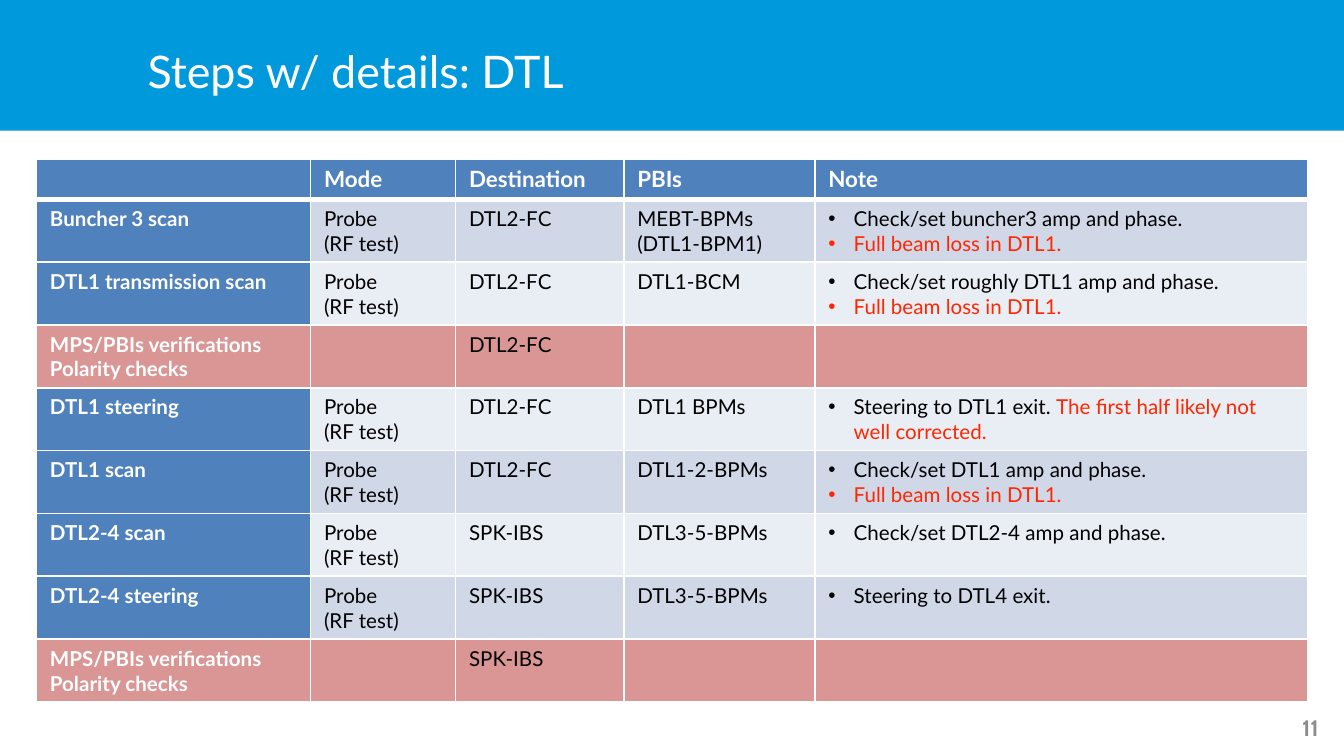
from dataclasses import dataclass

import lxml.etree
import pptx
import pptx.dml.color
import pptx.enum.shapes
import pptx.enum.text
import pptx.oxml.ns
import pptx.util
from pptx.util import Cm, Pt

COLORS = {
    "banner": "0099DC",
    "header": "4F81BD",
    "odd_row": "D0D8E8",
    "even_row": "E9EDF4",
    "check_row": "D99694",
    "text": "000000",
    "warning": "FF2600",
    "light": "FFFFFF",
    "page_number": "8C8C8C",
}
BODY_FONT = "Lato"
COLUMN_WIDTHS = (5.18, 2.74, 3.18, 3.61, 9.32)
HEADINGS = ("", "Mode", "Destination", "PBIs", "Note")
HEADER_HEIGHT, STEP_HEIGHT = 0.76, 1.18
BULLET_INDENT = Cm(0.48)


@dataclass
class Note:
    """One bullet: plain words, then words in the warning colour."""
    plain: str = ""
    warning: str = ""


@dataclass
class Step:
    name: str
    destination: str
    monitors: str = ""
    notes: tuple[Note, ...] = ()
    mode: str = "Probe\n(RF test)"
    is_check: bool = False


def verification(destination: str) -> Step:
    return Step("MPS/PBIs verifications Polarity checks", destination, mode="", is_check=True)


FULL_LOSS = Note(warning="Full beam loss in DTL1.")
STEPS = (
    Step("Buncher 3 scan", "DTL2-FC", "MEBT-BPMs\n(DTL1-BPM1)",
         (Note("Check/set buncher3 amp and phase."), FULL_LOSS)),
    Step("DTL1 transmission scan", "DTL2-FC", "DTL1-BCM",
         (Note("Check/set roughly DTL1 amp and phase."), FULL_LOSS)),
    verification("DTL2-FC"),
    Step("DTL1 steering", "DTL2-FC", "DTL1 BPMs",
         (Note("Steering to DTL1 exit. ", "The first half likely not well corrected."),)),
    Step("DTL1 scan", "DTL2-FC", "DTL1-2-BPMs",
         (Note("Check/set DTL1 amp and phase."), FULL_LOSS)),
    Step("DTL2-4 scan", "SPK-IBS", "DTL3-5-BPMs",
         (Note("Check/set DTL2-4 amp and phase."),)),
    Step("DTL2-4 steering", "SPK-IBS", "DTL3-5-BPMs", (Note("Steering to DTL4 exit."),)),
    verification("SPK-IBS"),
)


def rgb(color: str) -> pptx.dml.color.RGBColor:
    return pptx.dml.color.RGBColor.from_string(COLORS[color])


def add_element(parent, tag: str, **attributes: str):
    return lxml.etree.SubElement(parent, pptx.oxml.ns.qn(tag), attributes)


def format_run(run, size: float, color: str, bold: bool = False, font: str = BODY_FONT) -> None:
    run.font.name = font
    run.font.size = Pt(size)
    run.font.bold = bold
    run.font.color.rgb = rgb(color)


def add_label(slide, text: str, box: tuple, size: float, color: str, **style):
    label = slide.shapes.add_textbox(*(Cm(length) for length in box))
    frame = label.text_frame
    frame.word_wrap = True
    frame.vertical_anchor = pptx.enum.text.MSO_ANCHOR.MIDDLE
    frame.text = text
    format_run(frame.paragraphs[0].runs[0], size, color, **style)
    return label


def style_cell(cell, fill: str, bottom_width: float = 1) -> None:
    """Give the cell white borders and a solid fill."""
    properties = cell._tc.get_or_add_tcPr()
    for side in ("L", "R", "T", "B"):
        width = bottom_width if side == "B" else 1
        border = add_element(properties, f"a:ln{side}", w=str(Pt(width)))
        add_element(add_element(border, "a:solidFill"), "a:srgbClr", val=COLORS["light"])
    cell.fill.solid()
    cell.fill.fore_color.rgb = rgb(fill)


def write_cell(cell, text: str, size: float, color: str, bold: bool = False) -> None:
    cell.text_frame.text = text
    for paragraph in cell.text_frame.paragraphs:
        for run in paragraph.runs:
            format_run(run, size, color, bold)
        if not paragraph.runs:  # keeps an empty cell from stretching its row
            add_element(paragraph._p, "a:endParaRPr", sz=str(size * 100))


def write_notes(cell, notes: tuple[Note, ...]) -> None:
    frame = cell.text_frame
    for index, note in enumerate(notes):
        paragraph = frame.add_paragraph() if index else frame.paragraphs[0]
        properties = paragraph._p.get_or_add_pPr()
        properties.set("marL", str(BULLET_INDENT))
        properties.set("indent", str(-BULLET_INDENT))
        add_element(properties, "a:buFont", typeface="Arial")
        add_element(properties, "a:buChar", char="•")
        for text, color in ((note.plain, "text"), (note.warning, "warning")):
            if text:
                run = paragraph.add_run()
                run.text = text
                format_run(run, 11, color)


def add_steps_table(slide) -> None:
    height = HEADER_HEIGHT + STEP_HEIGHT * len(STEPS)
    table = slide.shapes.add_table(
        len(STEPS) + 1, len(HEADINGS), Cm(0.69), Cm(3), Cm(sum(COLUMN_WIDTHS)), Cm(height)
    ).table
    table.horz_banding = False
    for column, width in zip(table.columns, COLUMN_WIDTHS):
        column.width = Cm(width)
    for row in table.rows:
        row.height = Cm(STEP_HEIGHT)
    table.rows[0].height = Cm(HEADER_HEIGHT)

    for column, heading in enumerate(HEADINGS):
        style_cell(table.cell(0, column), "header", bottom_width=3)
        write_cell(table.cell(0, column), heading, 12, "light", bold=True)

    for row, step in enumerate(STEPS, start=1):
        band = "check_row" if step.is_check else "odd_row" if row % 2 else "even_row"
        texts = (step.name, step.mode, step.destination, step.monitors, "")
        for column, text in enumerate(texts):
            cell = table.cell(row, column)
            is_name = column == 0
            style_cell(cell, "header" if is_name and not step.is_check else band)
            if column == len(texts) - 1 and step.notes:
                write_notes(cell, step.notes)
            else:
                write_cell(cell, text, 11, "light" if is_name else "text", bold=is_name)


def main() -> None:
    presentation = pptx.Presentation()
    presentation.slide_width = Cm(25.4)
    presentation.slide_height = Cm(14.28)
    slide = presentation.slides.add_slide(presentation.slide_layouts[6])

    banner = slide.shapes.add_shape(
        pptx.enum.shapes.MSO_SHAPE.RECTANGLE, 0, 0, presentation.slide_width, Cm(2.47)
    )
    banner.shadow.inherit = False
    banner.fill.solid()
    banner.fill.fore_color.rgb = rgb("banner")
    banner.line.fill.background()

    add_label(slide, "Steps w/ details: DTL", (2.54, 0.3, 22.02, 2.06), 24, "light")
    add_steps_table(slide)
    page_number = add_label(slide, "11", (19.25, 13.36, 5.92, 0.76), 12, "page_number",
                            bold=True, font="Cabin")
    page_number.text_frame.paragraphs[0].alignment = pptx.enum.text.PP_ALIGN.RIGHT

    presentation.save("out.pptx")


if __name__ == "__main__":
    main()
